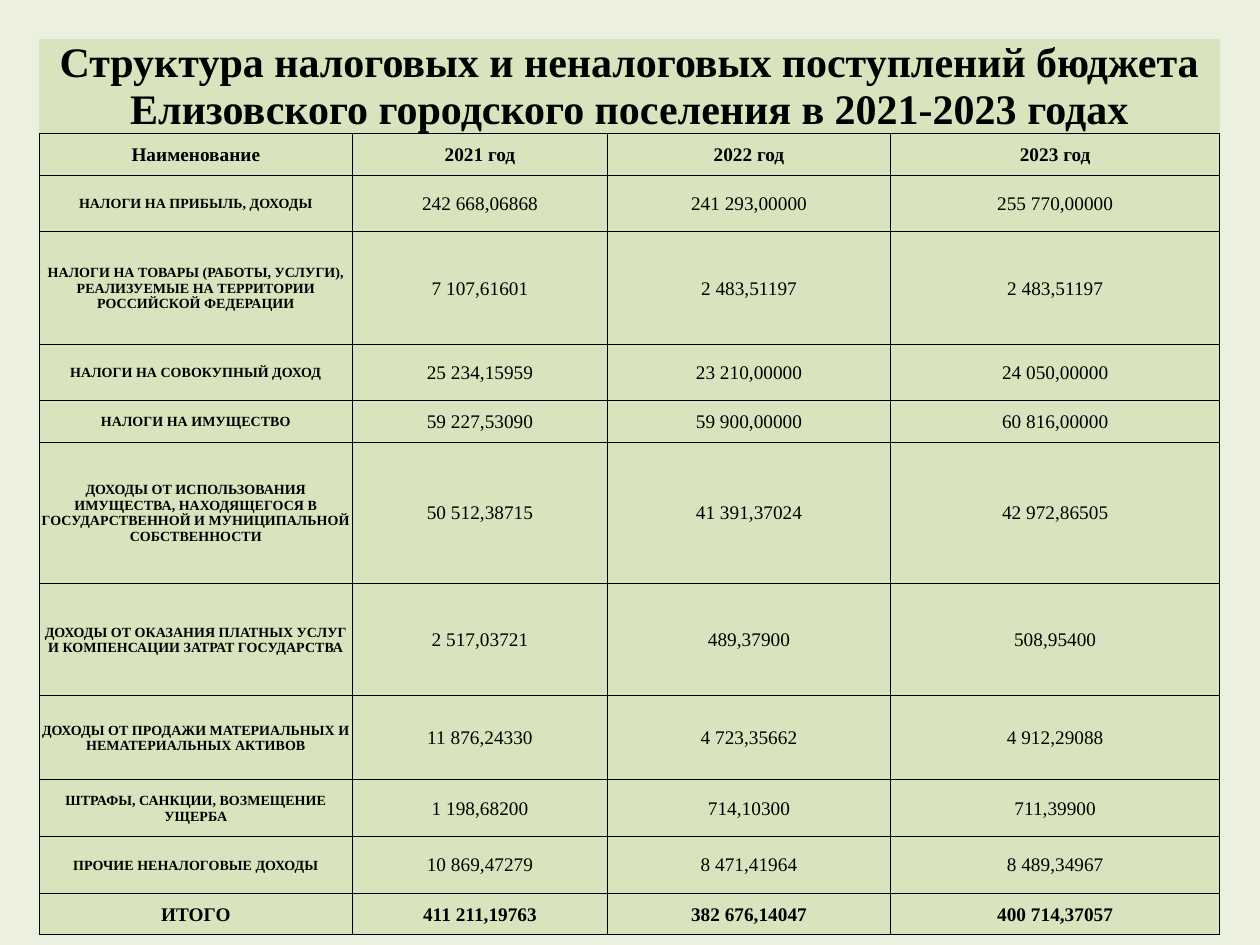
"""Build a slide with a table of municipal budget revenues for 2021-2023."""
from lxml import etree
from pptx import Presentation
from pptx import util as u
from pptx.dml.color import RGBColor
from pptx.enum import text
from pptx.oxml.ns import qn

COLORS = {"background": "EBF1DE", "cell": "D7E4BD", "ink": "000000"}
FONT = "Times New Roman"
TITLE = "Структура налоговых и неналоговых поступлений бюджета Елизовского городского поселения в 2021-2023 годах"
HEADER = ("Наименование", "2021 год", "2022 год", "2023 год")
REVENUES = [
    ("НАЛОГИ НА ПРИБЫЛЬ, ДОХОДЫ", "242 668,06868", "241 293,00000", "255 770,00000"),
    ("НАЛОГИ НА ТОВАРЫ (РАБОТЫ, УСЛУГИ), РЕАЛИЗУЕМЫЕ НА ТЕРРИТОРИИ РОССИЙСКОЙ ФЕДЕРАЦИИ",
     "7 107,61601", "2 483,51197", "2 483,51197"),
    ("НАЛОГИ НА СОВОКУПНЫЙ ДОХОД", "25 234,15959", "23 210,00000", "24 050,00000"),
    ("НАЛОГИ НА ИМУЩЕСТВО", "59 227,53090", "59 900,00000", "60 816,00000"),
    ("ДОХОДЫ ОТ ИСПОЛЬЗОВАНИЯ ИМУЩЕСТВА, НАХОДЯЩЕГОСЯ В ГОСУДАРСТВЕННОЙ И МУНИЦИПАЛЬНОЙ СОБСТВЕННОСТИ",
     "50 512,38715", "41 391,37024", "42 972,86505"),
    ("ДОХОДЫ ОТ ОКАЗАНИЯ ПЛАТНЫХ УСЛУГ И КОМПЕНСАЦИИ ЗАТРАТ ГОСУДАРСТВА",
     "2 517,03721", "489,37900", "508,95400"),
    ("ДОХОДЫ ОТ ПРОДАЖИ МАТЕРИАЛЬНЫХ И НЕМАТЕРИАЛЬНЫХ АКТИВОВ",
     "11 876,24330", "4 723,35662", "4 912,29088"),
    ("ШТРАФЫ, САНКЦИИ, ВОЗМЕЩЕНИЕ УЩЕРБА", "1 198,68200", "714,10300", "711,39900"),
    ("ПРОЧИЕ НЕНАЛОГОВЫЕ ДОХОДЫ", "10 869,47279", "8 471,41964", "8 489,34967"),
]
TOTAL = ("ИТОГО", "411 211,19763", "382 676,14047", "400 714,37057")
ROWS = [(TITLE, "", "", ""), HEADER, *REVENUES, TOTAL]
COLUMN_WIDTHS = (2.49, 2.02, 2.25, 2.61)
ROW_HEIGHTS = (0.75, 0.33, 0.45, 0.89, 0.45, 0.33, 1.12, 0.89, 0.67, 0.45, 0.45, 0.33)
MARGIN = 0.31


def set_borders(cell, visible):
    properties = cell._tc.get_or_add_tcPr()
    for index, side in enumerate("LRTB"):
        line = etree.Element(qn(f"a:ln{side}"), w=str(u.Pt(0.5)))
        if side in visible:
            fill = etree.SubElement(line, qn("a:solidFill"))
            etree.SubElement(fill, qn("a:srgbClr"), val=COLORS["ink"])
        else:
            etree.SubElement(line, qn("a:noFill"))
        properties.insert(index, line)


def format_cell(cell, content, size, bold, anchor, borders):
    cell.fill.solid()
    cell.fill.fore_color.rgb = RGBColor.from_string(COLORS["cell"])
    cell.margin_left = cell.margin_right = cell.margin_top = u.Inches(0.01)
    cell.margin_bottom = 0
    cell.vertical_anchor = anchor
    set_borders(cell, borders)
    cell.text_frame.text = content
    paragraph = cell.text_frame.paragraphs[0]
    paragraph.alignment = text.PP_ALIGN.CENTER
    for run in paragraph.runs:
        run.font.name = FONT
        run.font.size = u.Pt(size)
        run.font.bold = bold
        run.font.color.rgb = RGBColor.from_string(COLORS["ink"])


def add_revenue_table(slide):
    table = slide.shapes.add_table(
        len(ROWS), len(COLUMN_WIDTHS), u.Inches(MARGIN), u.Inches(MARGIN),
        u.Inches(sum(COLUMN_WIDTHS)), u.Inches(sum(ROW_HEIGHTS))).table
    table.first_row = table.horz_banding = False
    for column, width in zip(table.columns, COLUMN_WIDTHS):
        column.width = u.Inches(width)
    for row, height in zip(table.rows, ROW_HEIGHTS):
        row.height = u.Inches(height)
    table.cell(0, 0).merge(table.cell(0, len(COLUMN_WIDTHS) - 1))
    for row_index, row in enumerate(ROWS):
        is_title = row_index == 0
        is_revenue = row in REVENUES
        for column_index, content in enumerate(row):
            is_name = column_index == 0
            size = 24 if is_title else 8 if is_revenue and is_name else 11
            anchor = text.MSO_ANCHOR.TOP if is_title else text.MSO_ANCHOR.MIDDLE
            format_cell(table.cell(row_index, column_index), content, size,
                        is_name or not is_revenue, anchor, "B" if is_title else "LRTB")


def main():
    presentation = Presentation()
    presentation.slide_width, presentation.slide_height = u.Inches(10), u.Inches(7.5)
    slide = presentation.slides.add_slide(presentation.slide_layouts[6])
    slide.background.fill.solid()
    slide.background.fill.fore_color.rgb = RGBColor.from_string(COLORS["background"])
    add_revenue_table(slide)
    presentation.save("out.pptx")


if __name__ == "__main__":
    main()
